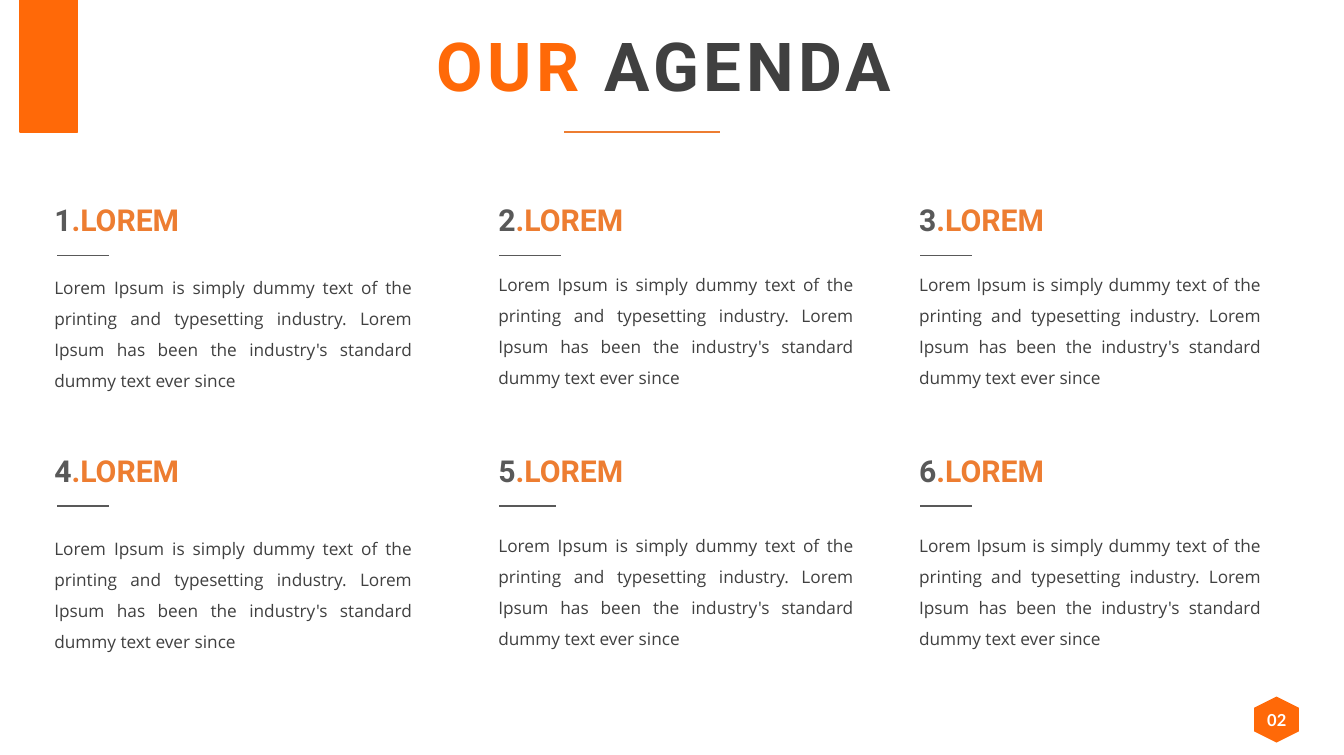
from lxml import etree
from pptx import Presentation
from pptx import util as u
from pptx.dml.color import RGBColor
from pptx.enum import shapes, text
from pptx.oxml.ns import qn

Inches = u.Inches
ORANGE, RUST, DARK, GREY, WHITE = "FF6908", "ED7D31", "404040", "595959", "FFFFFF"
SUMMARY = (
    "Lorem Ipsum is simply dummy text of the printing and typesetting industry. "
    "Lorem Ipsum has been the industry's standard dummy text ever since"
)
COLUMNS = [
    {"left": 0.86, "width": 7.3, "indent": 0.25, "drop": 0.05, "rules": (1, 1)},
    {"left": 9.45, "width": 7.25, "indent": 0.21, "drop": 0, "rules": (1.2, 1.1)},
    {"left": 17.59, "width": 6.99, "indent": 0.21, "drop": 0, "rules": (1, 1)},
]
ROWS = [{"top": 3.8, "summary": 1.21}, {"top": 8.65, "summary": 1.4}]


def paint(color_format, hex_color):
    """Set a fill or font colour from a hex string."""
    color_format.rgb = RGBColor.from_string(hex_color)


def write(holder, runs, *, size, font, bold=False, align=text.PP_ALIGN.LEFT,
          anchor=text.MSO_ANCHOR.TOP, line_spacing=1.0, tracking=None):
    """Fill a holder with one paragraph of (wording, colour) runs."""
    frame = holder.text_frame
    frame.word_wrap = True
    frame.auto_size = text.MSO_AUTO_SIZE.SHAPE_TO_FIT_TEXT
    frame.vertical_anchor = anchor
    frame.margin_left = frame.margin_right = Inches(0.19)
    frame.margin_top = frame.margin_bottom = Inches(0.1)
    paragraph = frame.paragraphs[0]
    paragraph.alignment = align
    paragraph.line_spacing = line_spacing
    for wording, color in runs:
        run = paragraph.add_run()
        run.text = wording
        run.font.size = u.Pt(size)
        run.font.name = font
        run.font.bold = bold
        paint(run.font.color, color)
        if tracking:
            run.font._element.set("spc", str(tracking * 100))


def add_text(slide, left, top, width, height, runs, **style):
    """Add a text box with the given runs."""
    box = slide.shapes.add_textbox(Inches(left), Inches(top), Inches(width), Inches(height))
    write(box, runs, **style)


def add_rule(slide, left, top, width, color):
    """Add a horizontal rule without a shadow."""
    rule = slide.shapes.add_connector(
        shapes.MSO_CONNECTOR.STRAIGHT,
        Inches(left), Inches(top), Inches(left + width), Inches(top))
    paint(rule.line.color, color)
    rule.line.width = u.Pt(2.25)
    etree.SubElement(rule._element.spPr, qn("a:effectLst"))


def add_block(slide, preset, left, top, width, height):
    """Add a flat orange shape."""
    block = slide.shapes.add_shape(
        preset, Inches(left), Inches(top), Inches(width), Inches(height))
    block.shadow.inherit = False
    block.fill.solid()
    paint(block.fill.fore_color, ORANGE)
    block.line.fill.background()
    return block


def add_header(slide, left, top, width, height):
    """Place the title and the rule beneath it."""
    title = slide.shapes.title
    title.left, title.top = Inches(left), Inches(top)
    title.width, title.height = Inches(width), Inches(height)
    write(title, [("OUR ", ORANGE), ("AGENDA", DARK)], size=94, font="Roboto",
          bold=True, align=text.PP_ALIGN.CENTER, tracking=6)
    add_rule(slide, left + 3.58, top + 2.19, 3, RUST)


def add_topic(slide, number, left, top, width, summary_offset, indent, rule_width):
    """Place one agenda topic: heading, rule and summary."""
    add_text(slide, left, top, 4, 0.9, [(str(number), GREY), (".LOREM", RUST)],
             size=42, font="Roboto", bold=True)
    add_rule(slide, left + indent, top + 1.14, rule_width, GREY)
    add_text(slide, left, top + summary_offset, width, 2.62, [(SUMMARY, DARK)],
             size=24, font="Open Sans", align=text.PP_ALIGN.JUSTIFY, line_spacing=1.5)


def add_agenda(slide):
    """Place the topics row by row on the column grid."""
    for row_index, row in enumerate(ROWS):
        for column_index, column in enumerate(COLUMNS):
            add_topic(slide, row_index * len(COLUMNS) + column_index + 1,
                      column["left"], row["top"], column["width"],
                      row["summary"] + column["drop"], column["indent"],
                      column["rules"][row_index])


def add_page_badge(slide, left, top, width, height):
    """Place the page number on its hexagon."""
    hexagon = add_block(slide, shapes.MSO_SHAPE.HEXAGON, left, top, width, height)
    hexagon.rotation = 270
    add_text(slide, left + 0.02, top + 0.14, 0.86, 0.59, [("02", WHITE)], size=23,
             font="Lato", bold=True, align=text.PP_ALIGN.CENTER,
             anchor=text.MSO_ANCHOR.MIDDLE)


def add_corner_band(slide, left, top, width, height):
    """Place the outlined band at the top left."""
    band = add_block(slide, shapes.MSO_SHAPE.RECTANGLE, left, top, width, height)
    paint(band.line.color, ORANGE)
    band.line.width = u.Pt(2)


def main():
    """Build and save the agenda slide."""
    deck = Presentation()
    deck.slide_width, deck.slide_height = Inches(26), Inches(14.6)
    slide = deck.slides.add_slide(deck.slide_layouts.get_by_name("Title Only"))
    add_header(slide, 7.34, 0.36, 11.01, 1.77)
    add_agenda(slide)
    add_page_badge(slide, 24.25, 13.48, 0.89, 0.87)
    add_corner_band(slide, 0.39, 0, 1.11, 2.55)
    deck.save("out.pptx")


if __name__ == "__main__":
    main()
